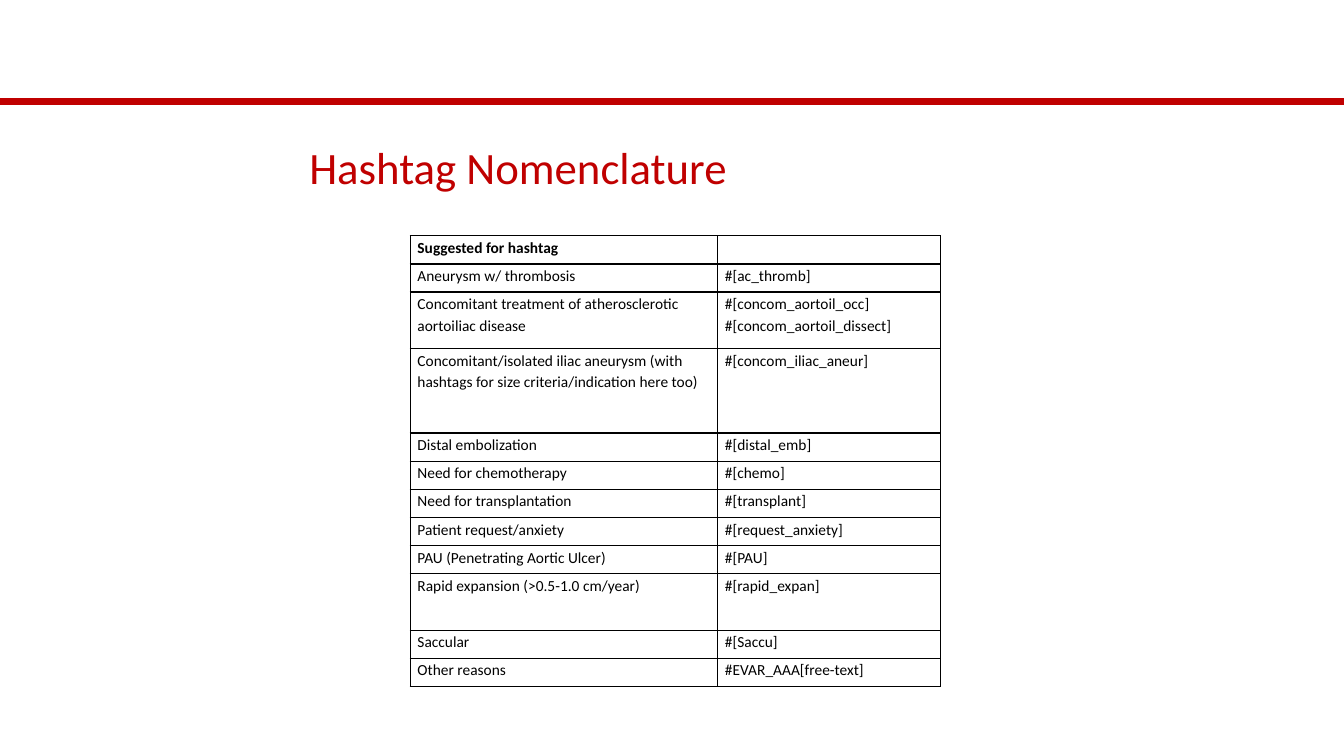
from lxml.etree import SubElement
from pptx import Presentation
from pptx.dml.color import RGBColor as Rgb
from pptx.enum.shapes import MSO_CONNECTOR as Connector
from pptx.enum.text import MSO_ANCHOR as Anchor, MSO_AUTO_SIZE as AutoSize, PP_ALIGN as Align
from pptx.oxml.ns import qn
from pptx.util import Cm, Pt

COLORS = {"accent": "C00000", "ink": "000000"}
FONT = "Calibri"
PAGE_WIDTH, PAGE_HEIGHT = 33.87, 19.05
COLUMN_WIDTHS = [7.75, 5.61]
ROW_UNIT = 0.71

# Row height in units, reason, hashtags
HASHTAGS = [
    (1, "Suggested for hashtag", []),
    (1, "Aneurysm w/ thrombosis", ["#[ac_thromb]"]),
    (2, "Concomitant treatment of atherosclerotic aortoiliac disease",
     ["#[concom_aortoil_occ]", "#[concom_aortoil_dissect]"]),
    (3, "Concomitant/isolated iliac aneurysm (with hashtags for size criteria/indication here too)",
     ["#[concom_iliac_aneur]"]),
    (1, "Distal embolization", ["#[distal_emb]"]),
    (1, "Need for chemotherapy", ["#[chemo]"]),
    (1, "Need for transplantation", ["#[transplant]"]),
    (1, "Patient request/anxiety", ["#[request_anxiety]"]),
    (1, "PAU (Penetrating Aortic Ulcer)", ["#[PAU]"]),
    (2, "Rapid expansion (>0.5-1.0 cm/year)", ["#[rapid_expan]"]),
    (1, "Saccular", ["#[Saccu]"]),
    (1, "Other reasons", ["#EVAR_AAA[free-text]"]),
]


class SlideBuilder:
    def __init__(self, page):
        self.page = page

    def color(self, name):
        return Rgb.from_string(COLORS[name])

    def span(self, para, text, size, color, bold=False):
        span = para.add_run()
        span.text = text
        span.font.name, span.font.size, span.font.bold = FONT, Pt(size), bold
        span.font.color.rgb = self.color(color)

    def rule(self, y, width, color):
        line = self.page.shapes.add_connector(
            Connector.STRAIGHT, Cm(0), Cm(y), Cm(PAGE_WIDTH), Cm(y))
        line.line.color.rgb = self.color(color)
        line.line.width = Pt(width)
        SubElement(line._element.spPr, qn("a:effectLst"))

    def title(self, text, left, top, width, height):
        box = self.page.shapes.title
        box.left, box.top, box.width, box.height = map(Cm, (left, top, width, height))
        frame = box.text_frame
        frame.auto_size, frame.vertical_anchor = AutoSize.NONE, Anchor.MIDDLE
        para = frame.paragraphs[0]
        para.alignment = Align.LEFT
        self.span(para, text, 32, "accent")

    def cell(self, cell, lines, bold):
        cell.margin_left = cell.margin_right = Cm(0.18)
        cell.margin_top = cell.margin_bottom = Cm(0)
        para = cell.text_frame.paragraphs[0]
        para.line_spacing = 1.15
        for index, text in enumerate(lines):
            if index:
                para.add_line_break()
            self.span(para, text, 11, "ink", bold)
        if not lines:
            # Keeps the empty cell as low as its row
            SubElement(para._p, qn("a:endParaRPr"), sz="1100")
        # Borders come before the fill
        properties = cell._tc.get_or_add_tcPr()
        for side in ("lnL", "lnR", "lnT", "lnB"):
            border = SubElement(properties, qn(f"a:{side}"), w=str(Pt(1)))
            fill = SubElement(border, qn("a:solidFill"))
            SubElement(fill, qn("a:srgbClr"), val=COLORS["ink"])
        cell.fill.background()

    def table(self, rows, left, top):
        height = ROW_UNIT * sum(units for units, _, _ in rows)
        table = self.page.shapes.add_table(
            len(rows), len(COLUMN_WIDTHS), Cm(left), Cm(top),
            Cm(sum(COLUMN_WIDTHS)), Cm(height)).table
        table.first_row = table.horz_banding = False
        for column, width in zip(table.columns, COLUMN_WIDTHS):
            column.width = Cm(width)
        for index, (units, reason, tags) in enumerate(rows):
            table.rows[index].height = Cm(units * ROW_UNIT)
            for column, lines in enumerate(([reason], tags)):
                self.cell(table.cell(index, column), lines, bold=index == 0)


def main():
    deck = Presentation()
    deck.slide_width, deck.slide_height = Cm(PAGE_WIDTH), Cm(PAGE_HEIGHT)
    title_only = deck.slide_layouts.get_by_name("Title Only")
    builder = SlideBuilder(deck.slides.add_slide(title_only))

    # Header rule and title
    builder.rule(2.57, 5, "accent")
    builder.title("Hashtag Nomenclature", 7.54, 3.25, 18.57, 1.88)

    # Hashtag table
    builder.table(HASHTAGS, 10.34, 5.94)

    deck.save("out.pptx")


if __name__ == "__main__":
    main()
